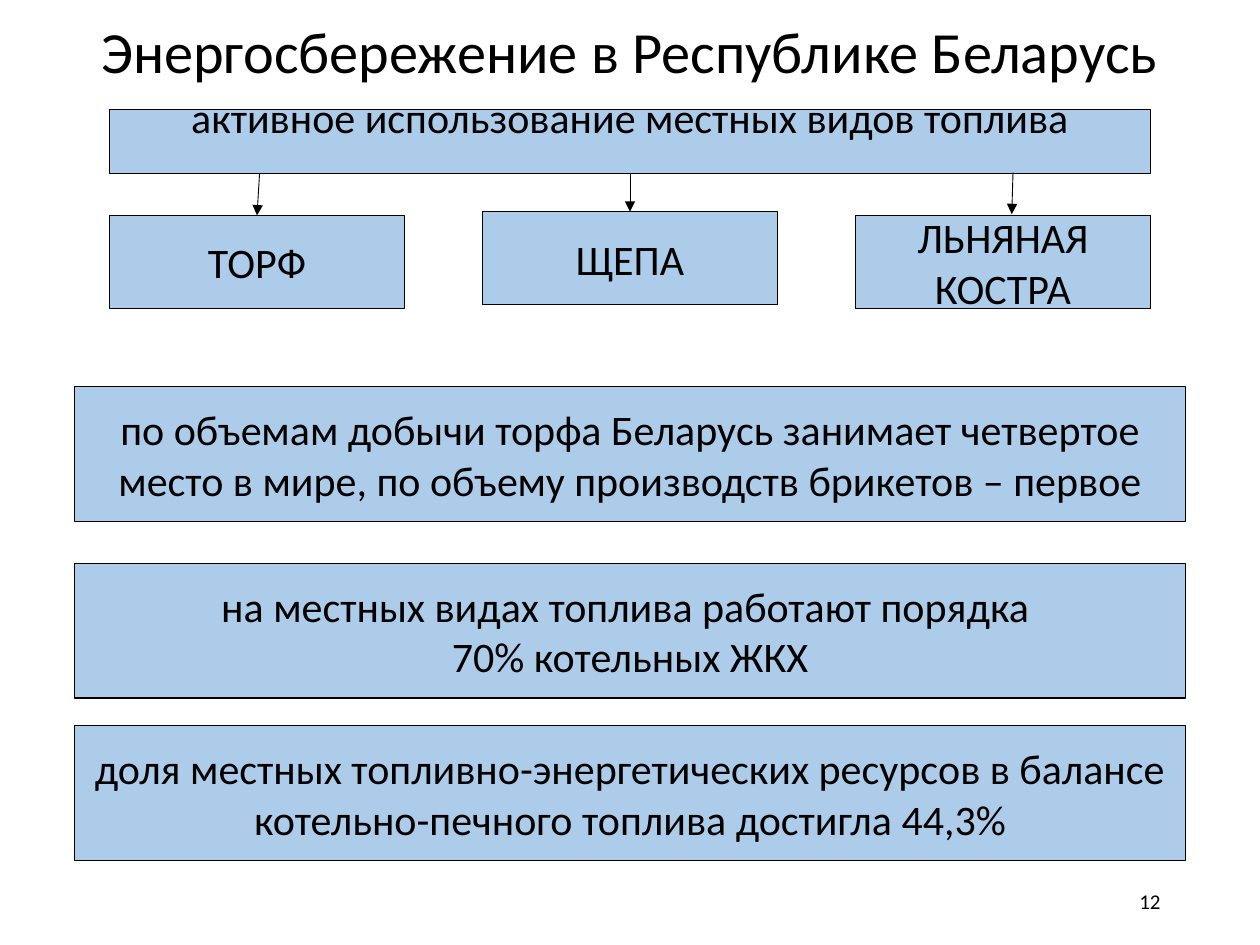
"""Build the slide on local fuels and energy saving in Belarus."""
from pptx import Presentation
from pptx.dml.color import RGBColor
from pptx.enum.shapes import MSO_CONNECTOR, MSO_SHAPE
from pptx.enum.text import MSO_ANCHOR, MSO_AUTO_SIZE, PP_ALIGN
from pptx.oxml.ns import qn
from pptx.util import Inches, Pt
from lxml.etree import SubElement


def color(value):
    return RGBColor.from_string(value)


def write_text(shape, lines, size, alignment):
    frame = shape.text_frame
    frame.text = "\n".join(lines)
    frame.word_wrap = True
    frame.auto_size = MSO_AUTO_SIZE.NONE
    frame.vertical_anchor = MSO_ANCHOR.MIDDLE
    for paragraph in frame.paragraphs:
        paragraph.alignment = alignment
        paragraph.font.name = "Calibri"
        paragraph.font.size = Pt(size)
        paragraph.font.color.rgb = color("000000")


presentation = Presentation()
presentation.slide_width = Inches(10)
presentation.slide_height = Inches(7.5)
slide = presentation.slides.add_slide(presentation.slide_layouts[5])

title = slide.shapes.title
title.left, title.top = Inches(0.59), Inches(0.06)
title.width, title.height = Inches(8.82), Inches(0.81)
write_text(title, ["Энергосбережение в Республике Беларусь"], 33.3, PP_ALIGN.CENTER)
title.text_frame.paragraphs[0].line_spacing = 0.7

number = slide.shapes.add_textbox(Inches(7.06), Inches(6.95), Inches(2.25), Inches(0.4))
write_text(number, ["12"], 12, PP_ALIGN.RIGHT)

boxes = [
    (0.87, 0.87, 8.26, 0.51, ["активное использование местных видов топлива\v"]),
    (0.87, 1.71, 2.34, 0.74, ["ТОРФ"]),
    (3.83, 1.68, 2.34, 0.74, ["ЩЕПА"]),
    (6.79, 1.71, 2.34, 0.74, ["ЛЬНЯНАЯ КОСТРА"]),
    (0.59, 3.07, 8.82, 1.07, ["по объемам добычи торфа Беларусь занимает четвертое "
                              "место в мире, по объему производств брикетов – первое"]),
    (0.59, 4.47, 8.82, 1.07, ["на местных видах топлива работают порядка ",
                              "70% котельных ЖКХ"]),
    (0.59, 5.76, 8.82, 1.07, ["доля местных топливно-энергетических ресурсов в балансе "
                              "котельно-печного топлива достигла 44,3%"]),
]
rectangles = []
for left, top, width, height, lines in boxes:
    rectangle = slide.shapes.add_shape(
        MSO_SHAPE.RECTANGLE, Inches(left), Inches(top), Inches(width), Inches(height))
    rectangle.shadow.inherit = False
    rectangle.fill.solid()
    rectangle.fill.fore_color.rgb = color("5B9BD5")
    fill_color = rectangle._element.spPr.find(qn("a:solidFill")).find(qn("a:srgbClr"))
    SubElement(fill_color, qn("a:alpha"), val="50000")
    rectangle.line.color.rgb = color("000000")
    rectangle.line.width = Pt(0.75)
    write_text(rectangle, lines, 24, PP_ALIGN.CENTER)
    rectangles.append(rectangle)

header, peat, chips = rectangles[:3]
arrows = [
    (2.06, 1.38, 2.04, 1.71, None, peat),
    (5, 1.38, 5, 1.68, header, chips),
    (8.04, 1.37, 8.03, 1.7, None, None),
]
for start_x, start_y, end_x, end_y, source, target in arrows:
    arrow = slide.shapes.add_connector(
        MSO_CONNECTOR.STRAIGHT, Inches(start_x), Inches(start_y), Inches(end_x), Inches(end_y))
    if source is not None:
        arrow.begin_connect(source, 2)
    if target is not None:
        arrow.end_connect(target, 0)
    arrow.line.color.rgb = color("000000")
    arrow.line.width = Pt(0.5)
    properties = arrow._element.spPr
    SubElement(properties.find(qn("a:ln")), qn("a:tailEnd"), type="triangle")
    SubElement(properties, qn("a:effectLst"))

presentation.save("out.pptx")
